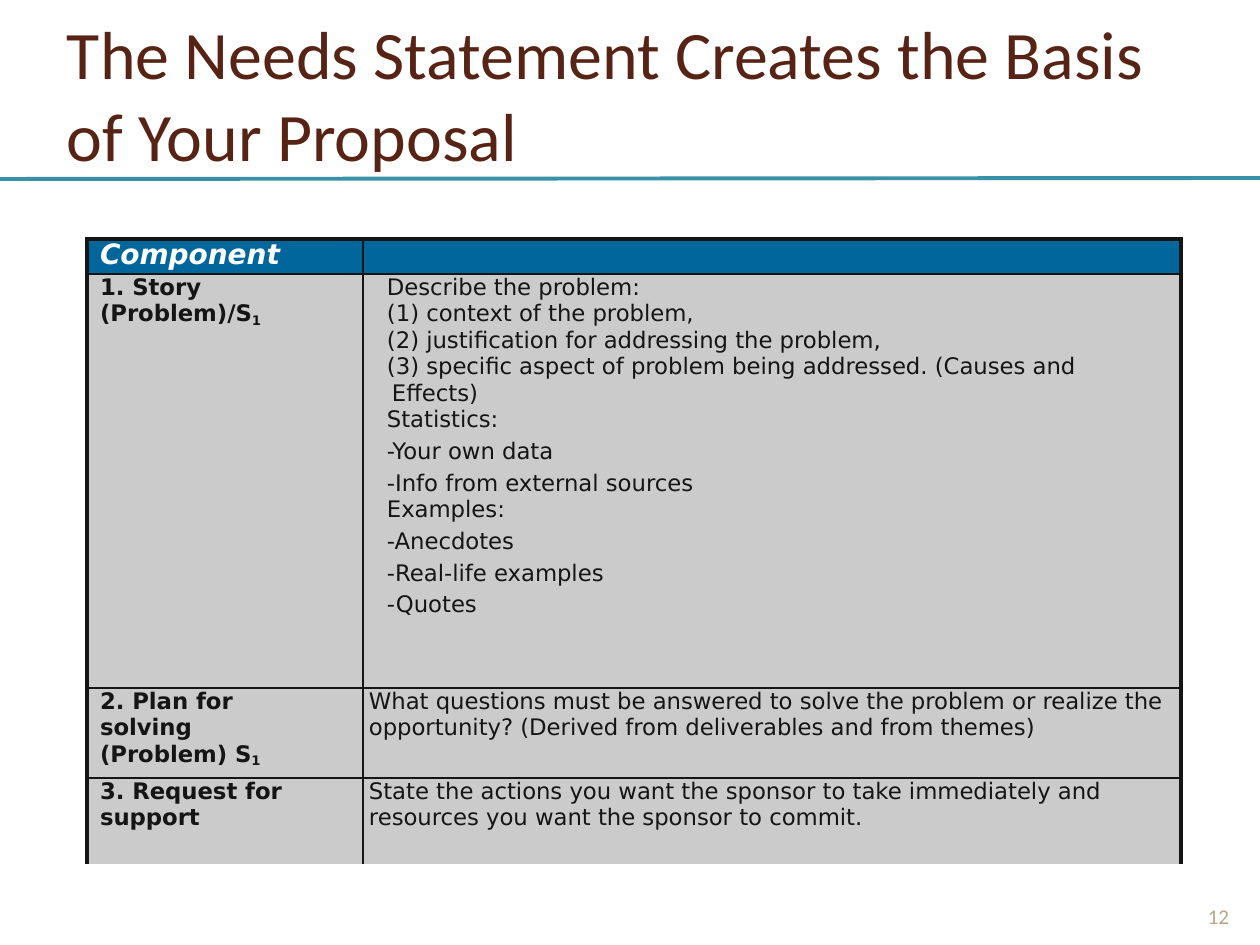
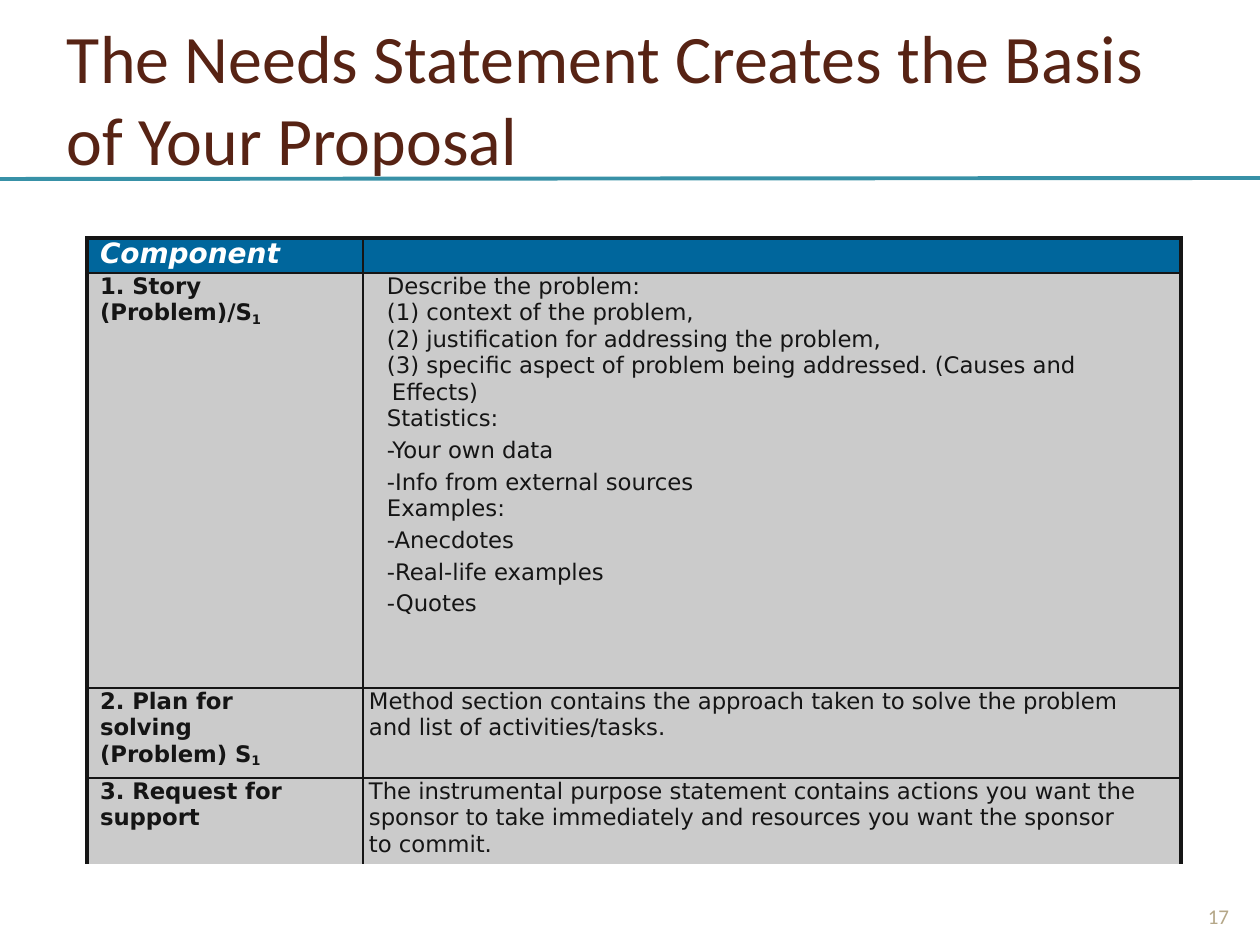
from dataclasses import dataclass

from lxml.etree import SubElement
from pptx import Presentation
from pptx.dml.color import RGBColor as RGB
from pptx.enum.shapes import MSO_CONNECTOR as CONN
from pptx.enum.text import MSO_ANCHOR as ANCHOR, PP_ALIGN as ALIGN
from pptx.oxml import parse_xml
from pptx.oxml.ns import nsdecls, qn
from pptx.util import Emu, Pt


@dataclass(frozen=True)
class Theme:
    title: str = "572314"
    rule: str = "3891A7"
    number: str = "B5A788"
    header: str = "00669C"
    body: str = "CBCBCB"
    ink: str = "151515"
    white: str = "FFFFFF"
    head_font: str = "Calibri"
    table_font: str = "DejaVu Sans"
    title_size: float = 38.8
    number_size: float = 12
    header_size: float = 16
    body_size: float = 13
    thick: float = 2.25
    thin: float = 1


T = Theme()
SLIDE_W, SLIDE_H = 1260, 945
COL_WIDTHS = (276, 818)
LABEL_INDENT, TEXT_INDENT, LIST_INDENT, HANGING = 13, 6, 24, 5
LABEL_INSET, TEXT_INSET, WIDE_INSET = 60, 41, 10

TITLE = "The Needs Statement Creates the Basis of Your Proposal"
LABELS = ("1. Story (Problem)/S_1", "2. Plan for solving (Problem) S_1",
          "3. Request for support")
STORY = ("Describe the problem:",
         "(1) context of the problem,",
         "(2) justification for addressing the problem,",
         "(3) specific aspect of problem being addressed. (Causes and Effects)",
         "Statistics:", "-Your own data", "-Info from external sources",
         "Examples:", "-Anecdotes", "-Real-life examples", "-Quotes")
HANGING_LINES = 4

# Title top, page number, table top, row heights, plan (text, right inset), request
SLIDES = (
    (11, "12", 239, (35, 414, 90, 86),
     ("What questions must be answered to solve the problem or realize the "
      "opportunity? (Derived from deliverables and from themes)", WIDE_INSET),
     "State the actions you want the sponsor to take immediately and "
     "resources you want the sponsor to commit."),
    (15, "17", 238, (35, 415, 90, 86),
     ("Method section contains the approach taken to solve the problem and "
      "list of activities/tasks.", TEXT_INSET),
     "The instrumental purpose statement contains actions you want the "
     "sponsor to take immediately and resources you want the sponsor to commit."),
)


def px(n):
    return Emu(round(n * 914400 / 126))


def style(r, size, color, font, bold=False, italic=False):
    r.font.size, r.font.name = Pt(size), font
    r.font.bold, r.font.italic = bold, italic
    r.font.color.rgb = RGB.from_string(color)


def indent(p, left, first=0):
    pPr = p._p.get_or_add_pPr()
    pPr.set("marL", str(px(left)))
    pPr.set("indent", str(px(first)))


# Title, rule and page number
def add_text(s, box, text, size, color, anchor, inset=None, align=None):
    tf = s.shapes.add_textbox(*map(px, box)).text_frame
    tf.word_wrap, tf.vertical_anchor = True, anchor
    if inset is not None:
        tf.margin_left = tf.margin_right = tf.margin_top = tf.margin_bottom = inset
    tf.text = text
    p = tf.paragraphs[0]
    p.alignment = align
    style(p.runs[0], size, color, T.head_font)
    return p


def add_frame(s, title_top, number):
    rule = s.shapes.add_connector(CONN.STRAIGHT, 0, px(179), px(SLIDE_W), px(178))
    rule.line.color.rgb = RGB.from_string(T.rule)
    rule.line.width = Pt(T.thick)
    SubElement(rule._element.spPr, qn("a:effectLst"))
    p = add_text(s, (66, title_top, 1091, 165), TITLE, T.title_size, T.title,
                 ANCHOR.MIDDLE, inset=0)
    indent(p, 1)
    add_text(s, (1187, 869, 63, 66), number, T.number_size, T.number,
             ANCHOR.BOTTOM, align=ALIGN.CENTER)


# Table cells
def set_borders(cell, widths):
    tcPr = cell._tc.get_or_add_tcPr()
    for i, (side, width) in enumerate(zip("LRTB", widths)):
        fill = (f'<a:solidFill><a:srgbClr val="{T.ink}"/></a:solidFill>'
                if width else "<a:noFill/>")
        tcPr.insert(i, parse_xml(
            f'<a:ln{side} {nsdecls("a")} w="{Pt(width)}">{fill}</a:ln{side}>'))


def prepare_cell(cell, fill, inset):
    cell.margin_left = cell.margin_top = cell.margin_bottom = 0
    cell.margin_right = px(inset)
    cell.vertical_anchor = ANCHOR.TOP
    cell.fill.solid()
    cell.fill.fore_color.rgb = RGB.from_string(fill)


def write_line(p, text, bold=False):
    """Writes body text; what follows an underscore is subscript."""
    for i, part in enumerate(text.split("_")):
        r = p.add_run()
        r.text = part
        style(r, T.body_size, T.ink, T.table_font, bold)
        if i:
            r.font._element.set("baseline", "-15000")


def write_header(label, empty):
    label.text_frame.text = "Component"
    p = label.text_frame.paragraphs[0]
    indent(p, LABEL_INDENT)
    style(p.runs[0], T.header_size, T.white, T.table_font, True, True)
    SubElement(empty.text_frame.paragraphs[0]._p, qn("a:endParaRPr"),
               sz=str(T.header_size * 100))


def write_body(cell, text, left, bold=False):
    p = cell.text_frame.paragraphs[0]
    indent(p, left)
    p.line_spacing = 1.01
    write_line(p, text, bold)


def write_story(cell):
    tf = cell.text_frame
    for i, text in enumerate(STORY):
        p = tf.add_paragraph() if i else tf.paragraphs[0]
        if i < HANGING_LINES:
            indent(p, LIST_INDENT + HANGING, -HANGING)
            p.line_spacing = 1.01
        else:
            indent(p, LIST_INDENT)
        if text.startswith("-"):
            p.space_before = Pt(3.2)
        write_line(p, text)


def add_components(s, left, top, heights, plan, request):
    box = (left, top, sum(COL_WIDTHS), sum(heights))
    tbl = s.shapes.add_table(len(heights), len(COL_WIDTHS), *map(px, box)).table
    for col, width in zip(tbl.columns, COL_WIDTHS):
        col.width = px(width)
    insets = (0, TEXT_INSET, plan[1], TEXT_INSET)
    for i, height in enumerate(heights):
        tbl.rows[i].height = px(height)
        upper = T.thin if i else T.thick
        lower = T.thin if i < len(heights) - 1 else 0
        for j, inset in enumerate((LABEL_INSET, insets[i])):
            cell = tbl.cell(i, j)
            prepare_cell(cell, T.body if i else T.header, inset)
            sides = (T.thin, T.thick) if j else (T.thick, T.thin)
            set_borders(cell, (*sides, upper, lower))
    write_header(tbl.cell(0, 0), tbl.cell(0, 1))
    for i, label in enumerate(LABELS, 1):
        write_body(tbl.cell(i, 0), label, LABEL_INDENT, bold=True)
    write_story(tbl.cell(1, 1))
    write_body(tbl.cell(2, 1), plan[0], TEXT_INDENT)
    write_body(tbl.cell(3, 1), request, TEXT_INDENT)


def main():
    prs = Presentation()
    prs.slide_width, prs.slide_height = px(SLIDE_W), px(SLIDE_H)
    for title_top, number, table_top, heights, plan, request in SLIDES:
        s = prs.slides.add_slide(prs.slide_layouts[6])
        add_frame(s, title_top, number)
        add_components(s, 87, table_top, heights, plan, request)
    prs.save("out.pptx")


if __name__ == "__main__":
    main()
